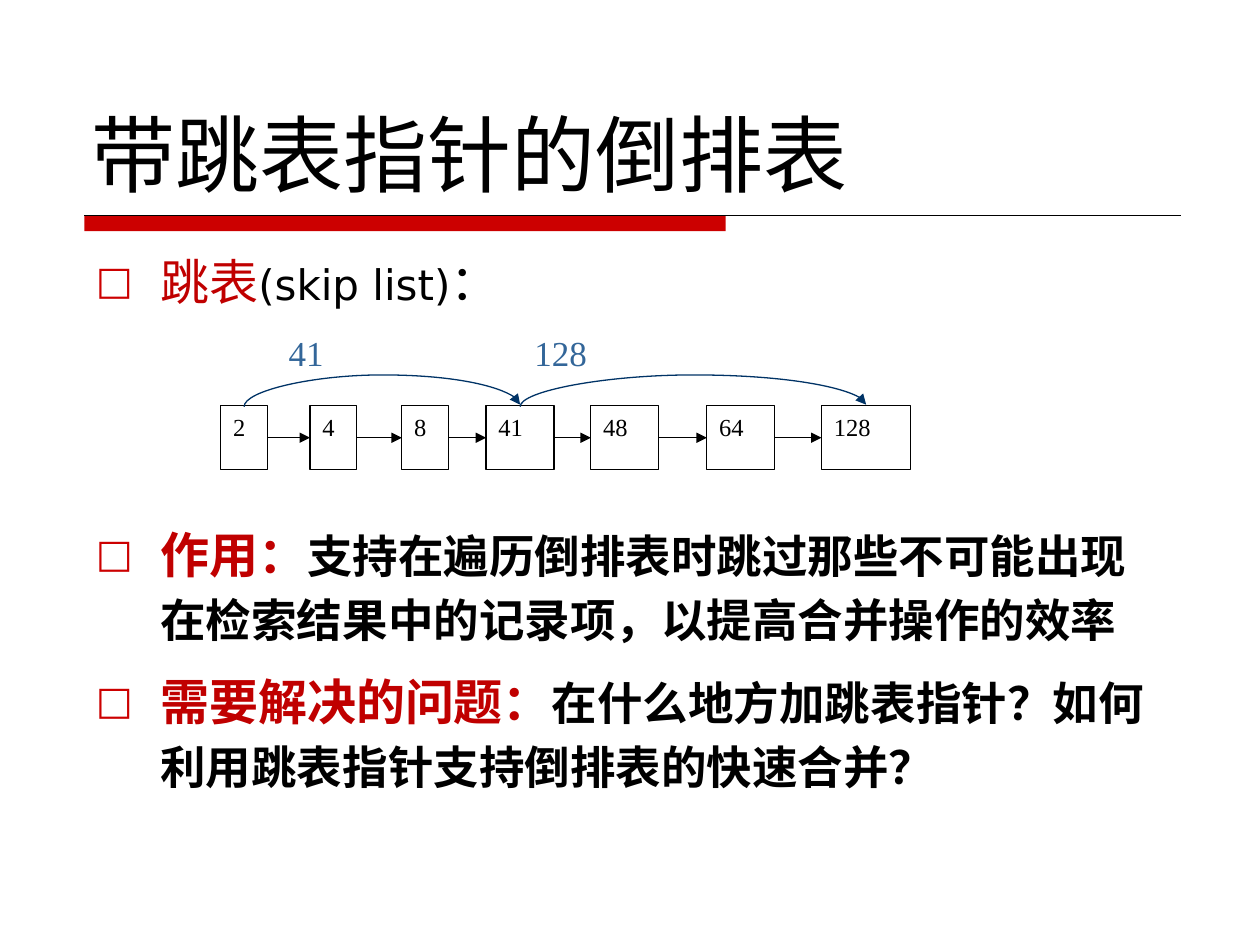
import lxml.etree
import pptx
import pptx.dml.color
import pptx.enum.shapes
import pptx.enum.text
import pptx.oxml.ns
import pptx.util

Cm, Pt = pptx.util.Cm, pptx.util.Pt
qn = pptx.oxml.ns.qn
CONNECTOR = pptx.enum.shapes.MSO_CONNECTOR
ALIGN = pptx.enum.text.PP_ALIGN
RECTANGLE = pptx.enum.shapes.MSO_SHAPE.RECTANGLE
COLORS = {"bar": "CC0000", "key": "C00000", "text": "000000",
          "skip": "003366", "label": "336699"}
SANS, SERIF = "DejaVu Sans", "Times New Roman"


def add_run(paragraph, text, size, color, font=SANS, bold=False):
    run = paragraph.add_run()
    run.text = text
    run.font.size = Pt(size)
    run.font.name = font
    run.font.bold = bold
    run.font.color.rgb = pptx.dml.color.RGBColor.from_string(COLORS[color])


def style_line(connector, color, arrow=True):
    connector.line.width = Pt(0.75)
    connector.line.color.rgb = pptx.dml.color.RGBColor.from_string(COLORS[color])
    if arrow:
        line = connector.line._get_or_add_ln()
        lxml.etree.SubElement(line, qn("a:tailEnd"), type="triangle")
    lxml.etree.SubElement(connector._element.spPr, qn("a:effectLst"))


presentation = pptx.Presentation()
presentation.slide_width, presentation.slide_height = Cm(25.4), Cm(19.05)
slide = presentation.slides.add_slide(presentation.slide_layouts[1])
shapes = slide.shapes

# Rule under the title
bar = shapes.add_shape(RECTANGLE, Cm(1.7), Cm(4.34), Cm(12.93), Cm(0.32))
bar.shadow.inherit = False
bar.fill.solid()
bar.fill.fore_color.rgb = pptx.dml.color.RGBColor.from_string(COLORS["bar"])
bar.line.fill.background()
rule = shapes.add_connector(CONNECTOR.STRAIGHT, Cm(1.7), Cm(4.34), Cm(23.8), Cm(4.34))
style_line(rule, "text", arrow=False)

# Title
title = shapes.title
title.left, title.top, title.width, title.height = Cm(1.6), Cm(0.84), Cm(22.22), Cm(3.38)
title.text_frame.auto_size = pptx.enum.text.MSO_AUTO_SIZE.NONE
title.text_frame.vertical_anchor = pptx.enum.text.MSO_ANCHOR.BOTTOM
title.text_frame.paragraphs[0].alignment = ALIGN.LEFT
add_run(title.text_frame.paragraphs[0], "带跳表指针的倒排表", 48, "text")

# Body list: space before, line spacing, runs; the wide gap holds the diagram
items = [
    (6, None, [("跳表", 28, "key", False), ("(skip list)", 24, "text", False),
               ("：", 28, "text", False)]),
    (120, 36, [("作用：", 28, "key", True),
               ("支持在遍历倒排表时跳过那些不可能出现在检索结果中的记录项，以提高合并操作的效率",
                26, "text", True)]),
    (12, 36, [("需要解决的问题：", 28, "key", True),
              ("在什么地方加跳表指针？如何利用跳表指针支持倒排表的快速合并？",
               26, "text", True)]),
]
body = slide.placeholders[1]
body.left, body.top, body.width, body.height = Cm(1.68), Cm(4.95), Cm(22.22), Cm(11.86)
body.text_frame.auto_size = pptx.enum.text.MSO_AUTO_SIZE.NONE
for index, (before, spacing, runs) in enumerate(items):
    frame = body.text_frame
    paragraph = frame.add_paragraph() if index else frame.paragraphs[0]
    paragraph.space_before = Pt(before)
    if spacing:
        paragraph.line_spacing = Pt(spacing)
    properties = paragraph._p.get_or_add_pPr()
    properties.set("marL", str(Cm(1.3)))
    properties.set("indent", str(-Cm(1.3)))
    bullet_color = lxml.etree.SubElement(properties, qn("a:buClr"))
    lxml.etree.SubElement(bullet_color, qn("a:srgbClr"), val=COLORS["bar"])
    lxml.etree.SubElement(properties, qn("a:buSzPct"), val="80000")
    lxml.etree.SubElement(properties, qn("a:buFont"), typeface=SANS)
    lxml.etree.SubElement(properties, qn("a:buChar"), char="□")
    for text, size, color, bold in runs:
        add_run(paragraph, text, size, color, bold=bold)

# Postings: document number, left, width
postings = [("2", 4.45, 0.94), ("4", 6.25, 0.94), ("8", 8.1, 0.94), ("41", 9.8, 1.37),
            ("48", 11.91, 1.37), ("64", 14.25, 1.37), ("128", 16.56, 1.8)]
box_top, box_height = 8.18, 1.29
centers = {}
previous_right = None
for number, left, width in postings:
    box = shapes.add_shape(RECTANGLE, Cm(left), Cm(box_top), Cm(width), Cm(box_height))
    box.shadow.inherit = False
    box.fill.background()
    box.line.width = Pt(0.75)
    box.line.color.rgb = pptx.dml.color.RGBColor.from_string(COLORS["text"])
    box.text_frame.vertical_anchor = pptx.enum.text.MSO_ANCHOR.TOP
    box.text_frame.paragraphs[0].alignment = ALIGN.LEFT
    add_run(box.text_frame.paragraphs[0], number, 14, "text", SERIF)
    centers[number] = left + width / 2
    if previous_right is not None:
        middle = Cm(box_top + box_height / 2)
        arrow = shapes.add_connector(CONNECTOR.STRAIGHT, Cm(previous_right), middle,
                                     Cm(left), middle)
        style_line(arrow, "text")
    previous_right = left + width

# Skip pointers: thin curved connectors turned a quarter, bulging upwards
thickness, rise = 0.04, 0.64
for start, end in [("2", "41"), ("41", "128")]:
    span = centers[end] - centers[start]
    left = (centers[start] + centers[end] - thickness) / 2
    top = box_top - span / 2
    curve = shapes.add_connector(CONNECTOR.CURVE, Cm(left), Cm(top),
                                 Cm(left + thickness), Cm(top + span))
    transform = curve._element.spPr.find(qn("a:xfrm"))
    for name, value in [("rot", "5400000"), ("flipH", "1"), ("flipV", "1")]:
        transform.set(name, value)
    geometry = curve._element.spPr.find(qn("a:prstGeom"))
    adjustments = geometry.find(qn("a:avLst"))
    if adjustments is None:
        adjustments = lxml.etree.SubElement(geometry, qn("a:avLst"))
    lxml.etree.SubElement(adjustments, qn("a:gd"), name="adj1",
                          fmla=f"val {round(rise / thickness * 100000)}")
    style_line(curve, "skip")

# Skip pointer labels
for text, left, width in [("41", 5.56, 1.22), ("128", 10.52, 1.57)]:
    label = shapes.add_textbox(Cm(left), Cm(6.55), Cm(width), Cm(1.12))
    label.text_frame.word_wrap = False
    label.text_frame.paragraphs[0].alignment = ALIGN.CENTER
    add_run(label.text_frame.paragraphs[0], text, 20, "label", SERIF)

presentation.save("out.pptx")
